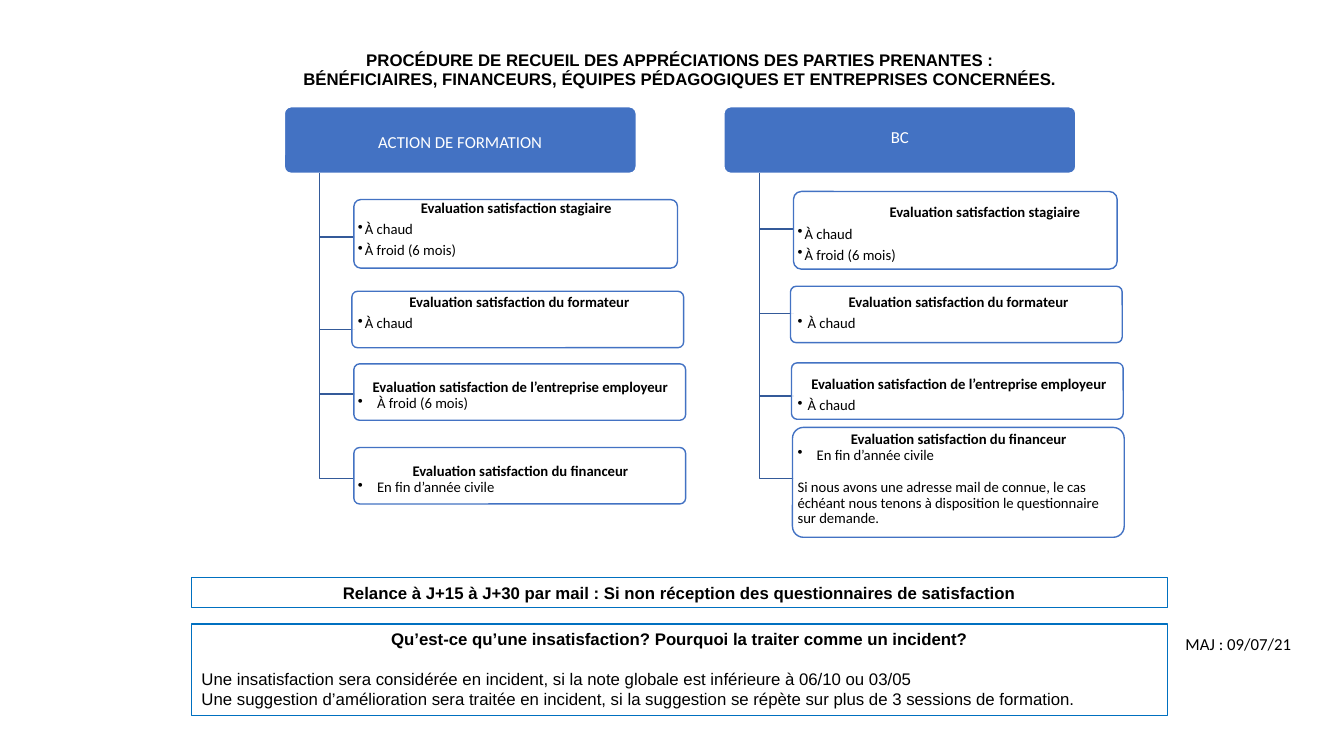
import pptx
import pptx.util
import pptx.dml.color
import pptx.enum.shapes
import pptx.enum.text
import pptx.oxml
import pptx.oxml.ns
from lxml import etree

Inches, Pt = pptx.util.Inches, pptx.util.Pt
RGBColor = pptx.dml.color.RGBColor
Kind = pptx.enum.shapes.MSO_SHAPE
Align = pptx.enum.text.PP_ALIGN
Anchor = pptx.enum.text.MSO_ANCHOR

BLUE = RGBColor(0x43, 0x72, 0xC3)
BRANCH_BLUE = RGBColor(0x34, 0x5A, 0x99)
FRAME_BLUE = RGBColor(0x00, 0x70, 0xC0)
WHITE = RGBColor(0xFF, 0xFF, 0xFF)
BLACK = RGBColor(0x00, 0x00, 0x00)

TITLE = ("PROCÉDURE DE RECUEIL DES APPRÉCIATIONS DES PARTIES PRENANTES :\v"
         "BÉNÉFICIAIRES, FINANCEURS, ÉQUIPES PÉDAGOGIQUES ET ENTREPRISES CONCERNÉES.")
REMINDER = "Relance à J+15 à J+30 par mail : Si non réception des questionnaires de satisfaction"
INCIDENT_QUESTION = "Qu’est-ce qu’une insatisfaction? Pourquoi la traiter comme un incident?"
INCIDENT_RULES = [
    "Une insatisfaction sera considérée en incident, si la note globale est inférieure à 06/10 ou 03/05",
    "Une suggestion d’amélioration sera traitée en incident, si la suggestion se répète sur plus de 3 sessions de formation.",
]
UPDATED = "MAJ : 09/07/21"
FINANCER_NOTE = ("Si nous avons une adresse mail de connue, le cas échéant nous tenons "
                 "à disposition le questionnaire sur demande.")

TRAINEE = "Evaluation satisfaction stagiaire"
TRAINER = "Evaluation satisfaction du formateur"
EMPLOYER = "Evaluation satisfaction de l’entreprise employeur"
FINANCER = "Evaluation satisfaction du financeur"

# heading, left, heading text shift, evaluations:
# (name, bullets, bullet indent, note, box, branch y, text shift, name indent)
TRACKS = [
    ("ACTION DE FORMATION", 2.82, 0.03, [
        (TRAINEE, ["À chaud", "À froid (6 mois)"], 0.07, None, (3.51, 1.98, 3.21, 0.68), 2.35, -0.04, 0),
        (TRAINER, ["À chaud"], 0.07, None, (3.49, 2.89, 3.29, 0.56), 3.27, -0.06, 0),
        (EMPLOYER, ["À froid (6 mois)"], 0.19, None, (3.51, 3.61, 3.29, 0.56), 3.91, 0.04, 0),
        (FINANCER, ["En fin d’année civile"], 0.19, None, (3.51, 4.44, 3.29, 0.56), 4.75, 0.04, 0),
    ]),
    ("BC", 7.18, -0.02, [
        (TRAINEE, ["À chaud", "À froid (6 mois)"], 0.07, None, (7.87, 1.9, 3.21, 0.77), 2.27, 0.04, 0.58),
        (TRAINER, ["À chaud"], 0.1, None, (7.84, 2.84, 3.29, 0.56), 3.11, -0.01, 0),
        (EMPLOYER, ["À chaud"], 0.1, None, (7.85, 3.6, 3.29, 0.56), 3.93, 0.04, 0),
        (FINANCER, ["En fin d’année civile"], 0.19, FINANCER_NOTE, (7.86, 4.24, 3.29, 1.09), 4.75, -0.03, 0),
    ]),
]
HEADING_TOP, HEADING_WIDTH, HEADING_HEIGHT = 1.06, 3.49, 0.66
TRUNK_OFFSET, BRANCH_LENGTH, TEXT_OFFSET = 0.35, 0.35, 0.73
ROUNDING = 0.1

deck = pptx.Presentation()
deck.slide_width, deck.slide_height = Inches(13.33), Inches(7.5)
slide = deck.slides.add_slide(deck.slide_layouts[6])


def inset(frame, left, top, right, bottom):
    frame.margin_left, frame.margin_top = Inches(left), Inches(top)
    frame.margin_right, frame.margin_bottom = Inches(right), Inches(bottom)


def add_box(kind, place, fill, line):
    box = slide.shapes.add_shape(kind, *map(Inches, place))
    box.shadow.inherit = False
    box.fill.solid()
    box.fill.fore_color.rgb = fill
    box.line.color.rgb = line
    box.line.width = Pt(1)
    box.text_frame.word_wrap = True
    if kind == Kind.ROUNDED_RECTANGLE:
        box.adjustments[0] = ROUNDING
    return box


def write(frame, text, size, font, color=BLACK, bold=False, align=Align.LEFT,
          spacing=1.0, before=0, indent=0, bullet=False):
    first = frame.paragraphs[0]
    paragraph = frame.add_paragraph() if first.text else first
    paragraph.text = text
    paragraph.alignment = align
    paragraph.line_spacing = spacing
    paragraph.space_before = Pt(before)
    paragraph.font.size, paragraph.font.name = Pt(size), font
    paragraph.font.bold, paragraph.font.color.rgb = bold, color
    properties = paragraph._p.get_or_add_pPr()
    properties.set("marL", str(Inches(indent)))
    properties.set("indent", str(-Inches(indent) if bullet else 0))
    if bullet:
        mark = pptx.oxml.ns.qn("a:buChar")
        properties.insert_element_before(
            properties.makeelement(mark, {"char": "•"}), "a:tabLst", "a:defRPr", "a:extLst")


def add_branch(x, top, bottom):
    builder = slide.shapes.build_freeform(Inches(x), Inches(top))
    builder.add_line_segments(
        [(Inches(x), Inches(bottom)), (Inches(x + BRANCH_LENGTH), Inches(bottom))], close=False)
    branch = builder.convert_to_shape()
    branch.shadow.inherit = False
    branch.fill.background()
    branch.line.color.rgb = BRANCH_BLUE
    branch.line.width = Pt(1)


def add_evaluation(text_left, name, bullets, indent, note, place, shift, name_indent):
    box = add_box(Kind.ROUNDED_RECTANGLE, place, WHITE, BLUE)
    shade = box.fill._xPr.find(".//" + pptx.oxml.ns.qn("a:srgbClr"))
    etree.SubElement(shade, pptx.oxml.ns.qn("a:alpha"), val="90000")
    frame = box.text_frame
    frame.vertical_anchor = Anchor.MIDDLE
    corner = 0.29 * ROUNDING * place[3]
    inset(frame, text_left - place[0] - corner, max(0, 2 * shift), 0.01, max(0, -2 * shift))
    tight = indent < 0.15
    write(frame, name, 10.5, "Calibri", bold=True, align=Align.CENTER, spacing=0.9, indent=name_indent)
    for text in bullets:
        write(frame, text, 10.5, "Calibri", spacing=0.9, before=3.7 if tight else 0,
              indent=indent, bullet=True)
    if note:
        write(frame, note, 10.5, "Calibri", spacing=0.9, before=11.5)


def add_label(place, text, size, font, **style):
    label = slide.shapes.add_textbox(*map(Inches, place))
    label.text_frame.word_wrap = True
    write(label.text_frame, text, size, font, **style)
    return label.text_frame


title = add_label((0.4, 0.4, 12.69, 0.6), TITLE, 12, "Arial", bold=True, align=Align.CENTER, spacing=0.9)
title.vertical_anchor = Anchor.MIDDLE

for heading, left, heading_shift, evaluations in TRACKS:
    head = add_box(Kind.ROUNDED_RECTANGLE, (left, HEADING_TOP, HEADING_WIDTH, HEADING_HEIGHT), BLUE, WHITE)
    head.text_frame.vertical_anchor = Anchor.MIDDLE
    inset(head.text_frame, 0.02, max(0, 2 * heading_shift), 0.02, max(0, -2 * heading_shift))
    write(head.text_frame, heading, 12, "Calibri", WHITE, align=Align.CENTER, spacing=0.9)
    for name, bullets, indent, note, place, branch_y, shift, name_indent in evaluations:
        add_branch(left + TRUNK_OFFSET, HEADING_TOP + HEADING_HEIGHT, branch_y)
        add_evaluation(left + TEXT_OFFSET, name, bullets, indent, note, place, shift, name_indent)

incident = add_box(Kind.RECTANGLE, (1.9, 6.19, 9.68, 0.91), WHITE, FRAME_BLUE).text_frame
incident.vertical_anchor = Anchor.TOP
write(incident, INCIDENT_QUESTION, 12, "Arial", bold=True, align=Align.CENTER)
for gap, rule in zip((13.8, 0), INCIDENT_RULES):
    write(incident, rule, 12, "Arial", before=gap)

reminder = add_box(Kind.RECTANGLE, (1.9, 5.73, 9.68, 0.3), WHITE, FRAME_BLUE).text_frame
reminder.vertical_anchor = Anchor.TOP
write(reminder, REMINDER, 12, "Arial", bold=True, align=Align.CENTER)

updated = add_label((11.66, 6.19, 1.6, 0.4), UPDATED, 12, "Calibri")
inset(updated, 0.1, 0.1, 0.1, 0.1)

deck.save("out.pptx")
